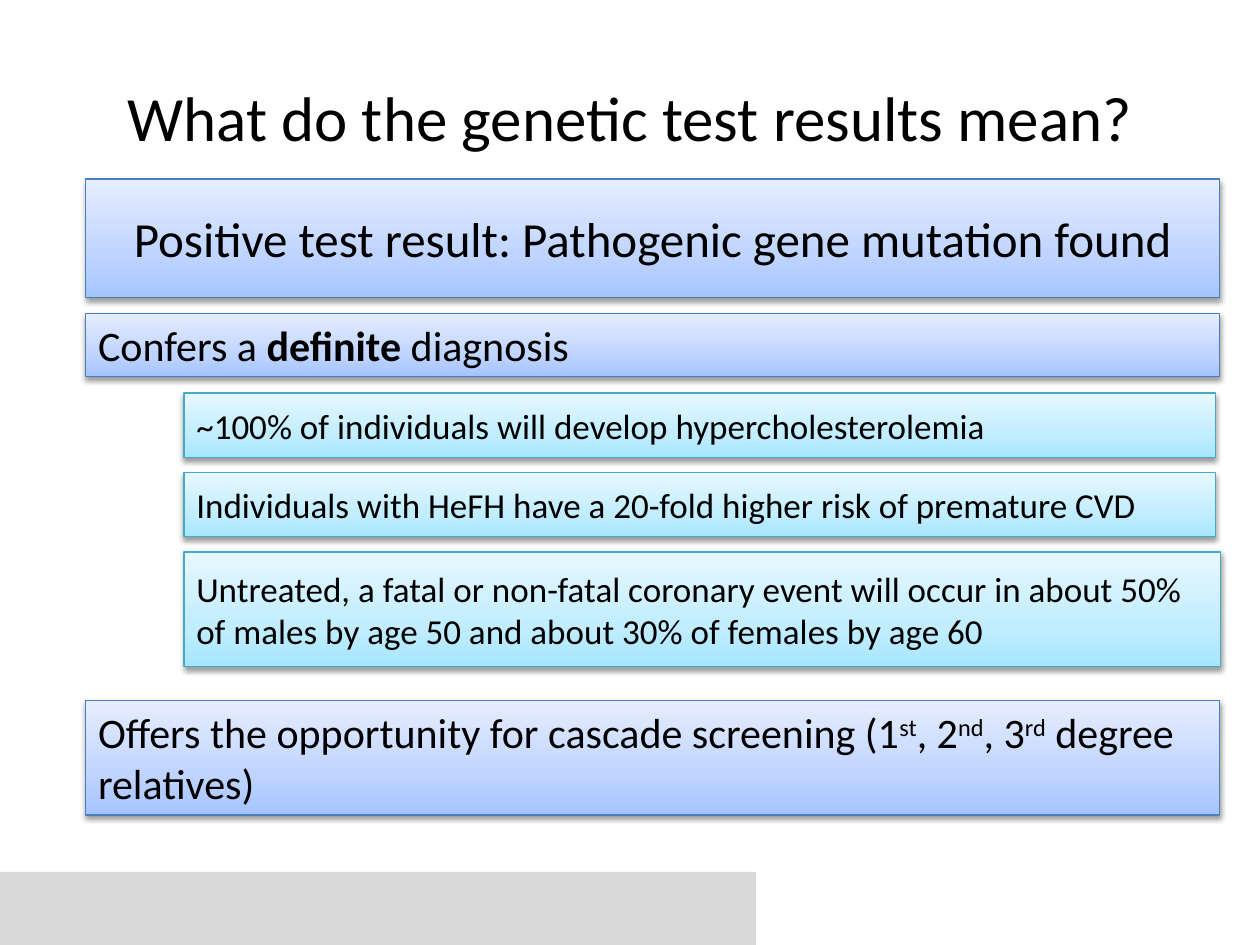
from lxml.etree import SubElement
from pptx import Presentation
from pptx.dml.color import RGBColor
from pptx.enum.shapes import MSO_SHAPE
from pptx.enum.text import MSO_ANCHOR, MSO_AUTO_SIZE, PP_ALIGN
from pptx.oxml.ns import qn
from pptx.util import Inches, Pt

BLACK = RGBColor(0, 0, 0)
GREY = RGBColor(0xD9, 0xD9, 0xD9)
BLUE_LINE = RGBColor(0x4B, 0x7E, 0xBC)
CYAN_LINE = RGBColor(0x46, 0xAA, 0xC5)
BLUES = [RGBColor(0xA4, 0xC4, 0xFF), RGBColor(0xBF, 0xD4, 0xFF), RGBColor(0xE6, 0xEE, 0xFF)]
CYANS = [RGBColor(0xA7, 0xE6, 0xFF), RGBColor(0xC1, 0xED, 0xFF), RGBColor(0xE7, 0xF8, 0xFF)]
STOPS = [0, 35, 100]
BLUE = (BLUES, BLUE_LINE)
CYAN = (CYANS, CYAN_LINE)


def shade(shape, tones):
    """Fill from the bottom up with one tone at each stop."""
    shape.fill.gradient()
    shape.fill.gradient_angle = 90
    stops = shape.fill._xPr.find(qn("a:gradFill")).find(qn("a:gsLst"))
    for old in list(stops):
        stops.remove(old)
    for pos, tone in zip(STOPS, tones):
        stop = SubElement(stops, qn("a:gs"), pos=str(pos * 1000))
        SubElement(stop, qn("a:srgbClr"), val=str(tone))


def add_shadow(shape):
    shape.shadow.inherit = False
    effects = shape._element.spPr.find(qn("a:effectLst"))
    drop = SubElement(effects, qn("a:outerShdw"), blurRad=str(Pt(3.1)),
                      dist=str(Pt(1.6)), dir="5400000", rotWithShape="0")
    color = SubElement(drop, qn("a:srgbClr"), val=str(BLACK))
    SubElement(color, qn("a:alpha"), val="38000")


def write(shape, parts, size, align=PP_ALIGN.LEFT, anchor=MSO_ANCHOR.MIDDLE):
    """Write (text, style) parts; style is "", "bold" or "super"."""
    frame = shape.text_frame
    frame.word_wrap = True
    frame.vertical_anchor = anchor
    para = frame.paragraphs[0]
    para.alignment = align
    for text, style in parts:
        run = para.add_run()
        run.text = text
        font = run.font
        font.name, font.size, font.color.rgb = "Calibri", Pt(size), BLACK
        if style == "bold":
            font.bold = True
        elif style == "super":
            font._element.set("baseline", "30000")


def add_panel(slide, box, look):
    tones, edge = look
    panel = slide.shapes.add_shape(MSO_SHAPE.RECTANGLE, *map(Inches, box))
    shade(panel, tones)
    panel.line.color.rgb = edge
    panel.line.width = Pt(0.75)
    add_shadow(panel)
    return panel


def add_footer(slide, box):
    bar = slide.shapes.add_shape(MSO_SHAPE.RECTANGLE, *map(Inches, box))
    bar.shadow.inherit = False
    bar.fill.solid()
    bar.fill.fore_color.rgb = GREY
    bar.line.fill.background()


def add_title(slide, box):
    title = slide.shapes.add_textbox(*map(Inches, box))
    write(title, [("What do the genetic test results mean?", "")], 36, PP_ALIGN.CENTER)


def add_banner(slide, box):
    panel = add_panel(slide, box, BLUE)
    write(panel, [("Positive test result: Pathogenic gene mutation found", "")],
          28, PP_ALIGN.CENTER)


def add_point(slide, box, parts):
    panel = add_panel(slide, box, BLUE)
    write(panel, parts, 24, anchor=MSO_ANCHOR.TOP)
    panel.text_frame.auto_size = MSO_AUTO_SIZE.SHAPE_TO_FIT_TEXT


def add_facts(slide, left, top, gap, facts):
    """Stack the (text, width, height) facts downwards from the top."""
    for text, width, height in facts:
        panel = add_panel(slide, (left, top, width, height), CYAN)
        write(panel, [(text, "")], 20)
        top += height + gap


def main():
    deck = Presentation()
    deck.slide_width, deck.slide_height = Inches(10), Inches(7.5)
    slide = deck.slides.add_slide(deck.slide_layouts[6])
    left, width = 0.68, 9

    add_footer(slide, (0, 6.92, 6, 0.58))
    add_title(slide, (0.5, 0.3, 9, 1.25))
    add_banner(slide, (left, 1.42, width, 0.94))
    add_point(slide, (left, 2.49, width, 0.5),
              [("Confers a ", ""), ("definite ", "bold"), ("diagnosis", "")])
    add_facts(slide, 1.46, 3.12, 0.12, [
        ("~100% of individuals will develop hypercholesterolemia", 8.19, 0.51),
        ("Individuals with HeFH have a 20-fold higher risk of premature CVD", 8.19, 0.51),
        ("Untreated, a fatal or non-fatal coronary event will occur in about 50% "
         "of males by age 50 and about 30% of females by age 60", 8.23, 0.91),
    ])
    add_point(slide, (left, 5.56, width, 0.91), [
        ("Offers the opportunity for cascade screening (1", ""), ("st", "super"),
        (", 2", ""), ("nd", "super"), (", 3", ""), ("rd", "super"),
        (" degree relatives)", ""),
    ])
    deck.save("out.pptx")


if __name__ == "__main__":
    main()
